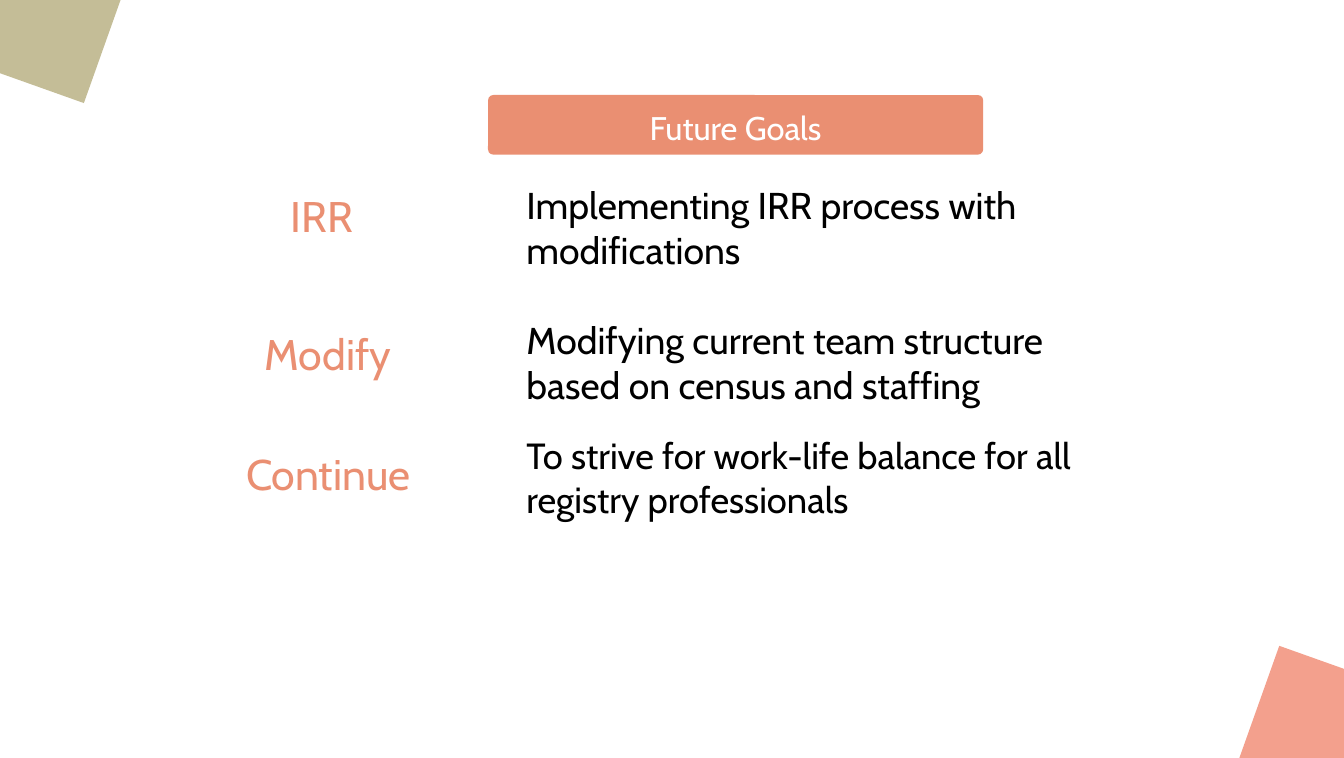
from pptx import Presentation
from pptx.dml.color import RGBColor
from pptx.enum.shapes import MSO_SHAPE
from pptx.enum.text import MSO_ANCHOR, PP_ALIGN
from pptx.util import Inches, Pt

ROUNDED = MSO_SHAPE.ROUNDED_RECTANGLE
MIDDLE, TOP = MSO_ANCHOR.MIDDLE, MSO_ANCHOR.TOP
CENTER, LEFT = PP_ALIGN.CENTER, PP_ALIGN.LEFT

# Content: text, (left, top, width, height) and size of each goal
TITLE = "Future Goals"
TITLE_BOX = (4.83, 0.94, 4.9, 0.59)
KEYWORDS = [
    ("IRR", (1.22, 1.8, 3.93, 0.55)),
    ("Modify", (1.25, 3.17, 3.99, 0.55)),
    ("Continue", (1.04, 4.35, 4.42, 0.55)),
]
GOALS = [
    ("Implementing IRR process with modifications", (5.21, 1.8, 5.32, 0.9), 26.6),
    ("Modifying current team structure based on census and staffing",
     (5.21, 3.14, 5.98, 0.9), 26.6),
    ("To strive for work-life balance for all registry professionals",
     (5.21, 4.29, 6.53, 0.87), 25.9),
]
CORNERS = [
    ("khaki", [(-1.74, -4.39), (2.25, -2.97), (0.83, 1.02), (-3.16, -0.4)]),
    ("salmon", [(12.66, 6.39), (15.75, 7.49), (14.44, 11.17), (11.35, 10.07)]),
]

THEME = {
    "font": "Cabin",
    "coral": "EA8F72", "khaki": "C4BD97", "salmon": "F3A08D",
    "white": "FFFFFF", "black": "000000",
    "title_size": 23.3, "title_line": 32.1,
    "keyword_size": 30.5, "keyword_line": 42,
}


def color(name):
    return RGBColor.from_string(THEME[name])


def paint(shape, fill):
    shape.shadow.inherit = False
    shape.fill.solid()
    shape.fill.fore_color.rgb = color(fill)
    shape.line.fill.background()


def write(shape, text, size, ink, align, anchor=TOP, line=None):
    frame = shape.text_frame
    frame.word_wrap = True
    frame.vertical_anchor = anchor
    frame.margin_left = frame.margin_right = 0
    frame.margin_top = frame.margin_bottom = 0
    paragraph = frame.paragraphs[0]
    paragraph.text = text
    paragraph.alignment = align
    if line:
        paragraph.line_spacing = Pt(line)
    paragraph.font.name = THEME["font"]
    paragraph.font.size = Pt(size)
    paragraph.font.color.rgb = color(ink)


def inches(values):
    return [Inches(value) for value in values]


presentation = Presentation()
presentation.slide_width, presentation.slide_height = inches((13.3, 7.5))
slide = presentation.slides.add_slide(presentation.slide_layouts[6])
shapes = slide.shapes

# Tilted corner blocks
for fill, corners in CORNERS:
    start, *others = [inches(corner) for corner in corners]
    builder = shapes.build_freeform(*start)
    builder.add_line_segments(others, close=True)
    paint(builder.convert_to_shape(), fill)

# Title bar
title_bar = shapes.add_shape(ROUNDED, *inches(TITLE_BOX))
title_bar.adjustments[0] = 0.09
paint(title_bar, "coral")
write(title_bar, TITLE, THEME["title_size"], "white", CENTER, MIDDLE, THEME["title_line"])

# Keywords and the goals beside them
for text, box in KEYWORDS:
    write(shapes.add_textbox(*inches(box)), text, THEME["keyword_size"], "coral",
          CENTER, line=THEME["keyword_line"])
for text, box, size in GOALS:
    write(shapes.add_textbox(*inches(box)), text, size, "black", LEFT)

presentation.save("out.pptx")
